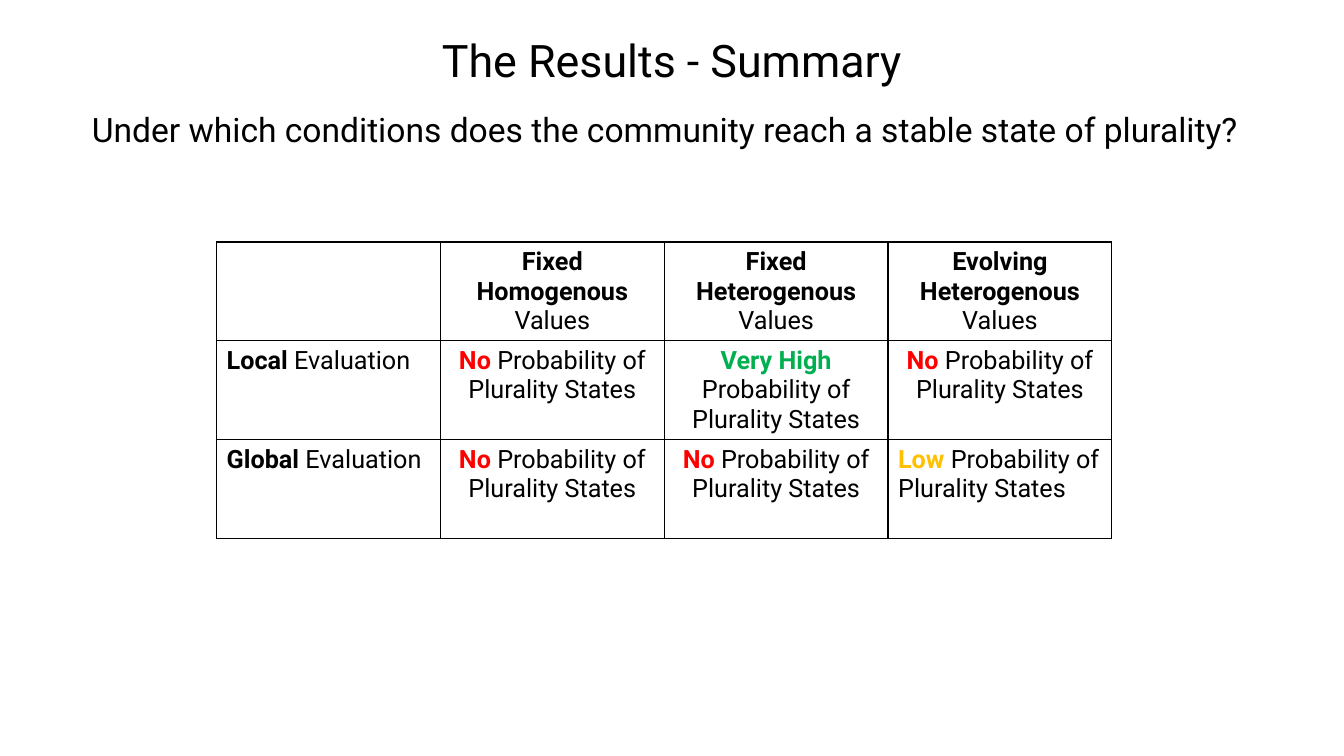
import pptx
import pptx.util
import pptx.dml.color
import pptx.enum.text
import pptx.oxml.ns
from lxml import etree

Cm = pptx.util.Cm
Pt = pptx.util.Pt
RGBColor = pptx.dml.color.RGBColor
ALIGN = pptx.enum.text.PP_ALIGN
qn = pptx.oxml.ns.qn

BLACK = RGBColor(0, 0, 0)
RED = RGBColor(0xFF, 0, 0)
GREEN = RGBColor(0, 0xB0, 0x50)
AMBER = RGBColor(0xFF, 0xC0, 0)
FONT = "Roboto"

TITLE = "The Results - Summary"
QUESTION = "Under which conditions does the community reach a stable state of plurality?"
OUTCOME = " Probability of Plurality States"
VALUE_TYPES = ["Fixed Homogenous", "Fixed Heterogenous", "Evolving Heterogenous"]
EVALUATIONS = [
    ("Local", [("No", RED), ("Very High", GREEN), ("No", RED)]),
    ("Global", [("No", RED), ("No", RED), ("Low", AMBER)]),
]
LEFT_ALIGNED = {(1, 0), (2, 0), (2, 3)}

TABLE_LEFT, TABLE_TOP = Cm(5.46), Cm(6.1)
COLUMN_WIDTH, ROW_HEIGHT = Cm(5.64), Cm(2.49)


def add_span(para, text, size, color=BLACK, bold=False):
    span = para.add_run()
    span.text = text
    span.font.name = FONT
    span.font.size = Pt(size)
    span.font.bold = bold
    span.font.color.rgb = color


def fill_placeholder(box, text, size, left, top, width, height):
    box.left, box.top, box.width, box.height = left, top, width, height
    frame = box.text_frame
    frame.word_wrap = True
    frame.auto_size = pptx.enum.text.MSO_AUTO_SIZE.NONE
    frame.vertical_anchor = pptx.enum.text.MSO_ANCHOR.TOP
    para = frame.paragraphs[0]
    properties = para._p.get_or_add_pPr()
    properties.set("marL", "0")
    properties.set("indent", "0")
    etree.SubElement(properties, qn("a:buNone"))
    para.alignment = ALIGN.CENTER
    para.line_spacing = 0.9
    para.space_before = Pt(0)
    add_span(para, text, size)


def add_borders(cell):
    properties = cell._tc.get_or_add_tcPr()
    for side in ("a:lnL", "a:lnR", "a:lnT", "a:lnB"):
        line = etree.SubElement(properties, qn(side), w=str(Pt(1)))
        fill = etree.SubElement(line, qn("a:solidFill"))
        etree.SubElement(fill, qn("a:srgbClr"), val=str(BLACK))


def add_results(page):
    rows = [[None] + [(kind, BLACK, " Values") for kind in VALUE_TYPES]]
    for scope, findings in EVALUATIONS:
        rows.append([(scope, BLACK, " Evaluation")]
                    + [(level, color, OUTCOME) for level, color in findings])
    count = len(rows[0])
    table = page.shapes.add_table(
        len(rows), count, TABLE_LEFT, TABLE_TOP,
        COLUMN_WIDTH * count, ROW_HEIGHT * len(rows)).table
    table.first_row = False
    table.horz_banding = False
    for column in table.columns:
        column.width = COLUMN_WIDTH
    for row_index, row in enumerate(rows):
        table.rows[row_index].height = ROW_HEIGHT
        for column_index, content in enumerate(row):
            cell = table.cell(row_index, column_index)
            add_borders(cell)
            cell.fill.background()
            if content is None:
                continue
            emphasis, color, rest = content
            para = cell.text_frame.paragraphs[0]
            is_left = (row_index, column_index) in LEFT_ALIGNED
            para.alignment = ALIGN.LEFT if is_left else ALIGN.CENTER
            add_span(para, emphasis, 18, color, True)
            add_span(para, rest, 18)


def main():
    deck = pptx.Presentation()
    deck.slide_width, deck.slide_height = Cm(33.87), Cm(19.05)
    page = deck.slides.add_slide(deck.slide_layouts[1])
    fill_placeholder(page.shapes.title, TITLE, 32,
                     Cm(0.36), Cm(0.86), Cm(33.15), Cm(1.32))
    fill_placeholder(page.placeholders[1], QUESTION, 24,
                     Cm(0.36), Cm(2.72), Cm(32.79), Cm(1.32))
    add_results(page)
    deck.save("out.pptx")


if __name__ == "__main__":
    main()
